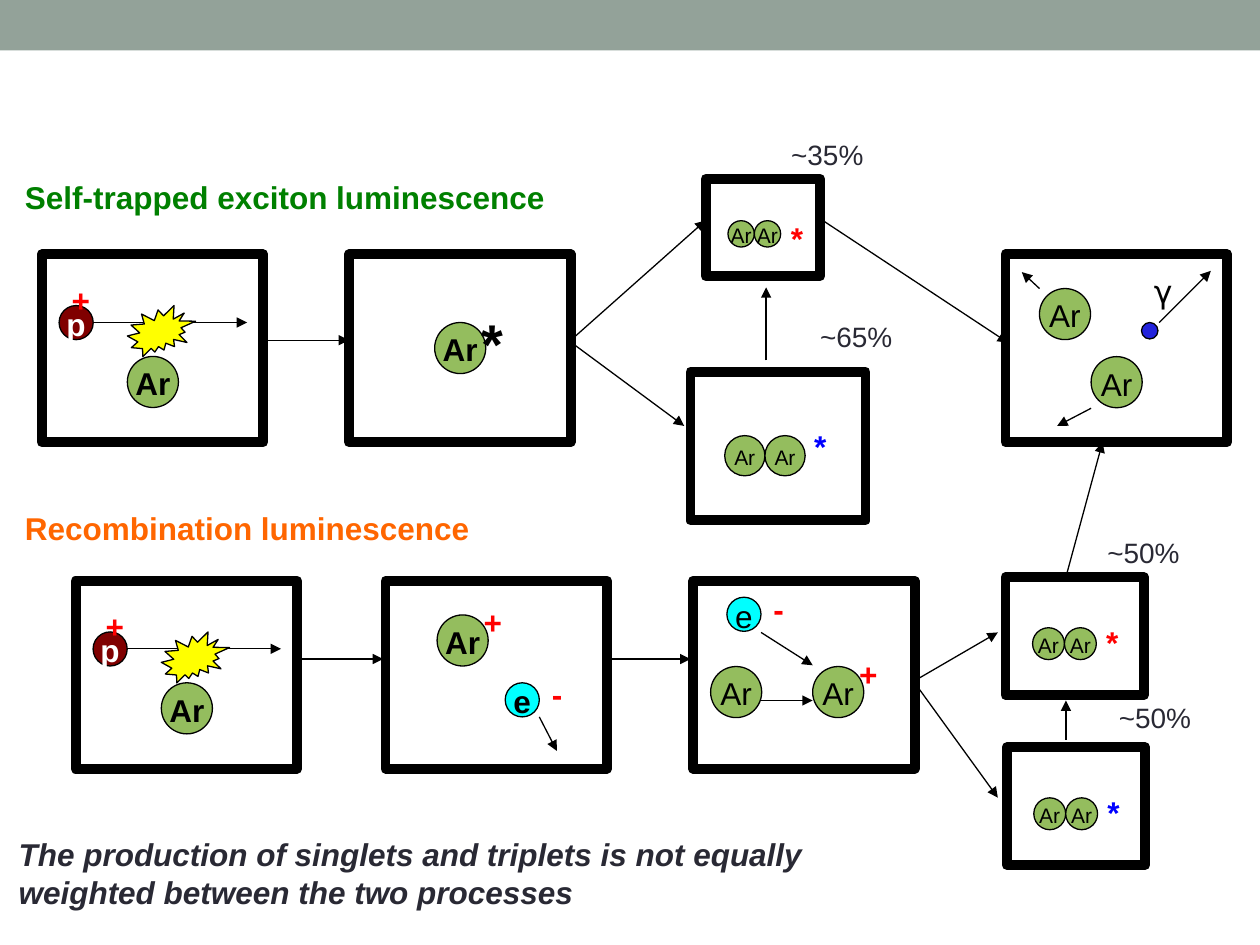
from pptx import Presentation
from pptx.dml.color import RGBColor
from pptx.enum.shapes import MSO_CONNECTOR, MSO_SHAPE
from pptx.enum.text import MSO_ANCHOR, PP_ALIGN
from pptx.oxml.ns import qn
from pptx.util import Pt
from lxml.etree import SubElement

BLACK, RED, BLUE, GREEN = "000000", "FF0000", "0000FF", "94BD5E"
CYAN, DARK = "00FFFF", "292934"
PANEL_WIDTH, PANEL_HEIGHT = 126.7, 107.3
ATOM, PARTICLE, PHOTON = 29.2, 19.5, 9.4

COLLISION_PANELS = [(23.8, 145.4), (43.2, 331.9)]
PLAIN_PANELS = [(199.4, 145.4), (574.6, 145.4), (220.3, 331.9), (396, 331.9)]

# left, top, frame width, star colour
EXCIMERS = [
    (403.2, 102.2, 65.5, RED),
    (394.6, 212.4, 100, BLUE),
    (574.6, 329.8, 79.2, RED),
    (575.3, 427, 79.2, BLUE),
]

# text, left, top, diameter, fill, bold
PARTICLES = [
    ("Ar", 248.4, 184.3, ATOM, GREEN, True),
    ("Ar", 623.5, 203.8, ATOM, GREEN, False),
    ("Ar", 594, 164.9, ATOM, GREEN, False),
    ("", 652.3, 184.3, PHOTON, "2323DC", False),
    ("Ar", 249.8, 351.4, ATOM, GREEN, True),
    ("e", 288.7, 390.2, PARTICLE, CYAN, True),
    ("e", 415.4, 341.3, PARTICLE, CYAN, False),
    ("Ar", 406.1, 380.9, ATOM, GREEN, False),
    ("Ar", 464.4, 380.9, ATOM, GREEN, False),
]

# text, left, top
CHARGES = [("+", 269.3, 339.8), ("-", 308.2, 380.9),
           ("-", 434.9, 331.9), ("+", 483.8, 369.4)]

# start x, start y, end x, end y
ARROWS = [
    (150.5, 194.4, 199.4, 194.4),
    (326.2, 194.4, 403.2, 126),
    (324.7, 194.4, 391, 243.4),
    (437.8, 205.9, 437.8, 164.2),
    (470.2, 126, 576, 195.8),
    (594, 164.9, 583.9, 155.5),
    (623.5, 233.3, 604.1, 243.4),
    (662.4, 184.3, 691.9, 154.8),
    (169.9, 376.6, 218.9, 376.6),
    (344.9, 376.6, 394.6, 376.6),
    (308.2, 409.7, 318.2, 429.1),
    (434.9, 400.3, 464.4, 400.3),
    (434.9, 361.4, 464.4, 380.2),
    (520.6, 390.2, 570.2, 361.4),
    (522.7, 390.2, 570.2, 455.8),
    (609.1, 422.6, 609.1, 400.3),
    (609.1, 329.8, 630, 252.7),
]

# text, left, top
PERCENTAGES = [("~35%", 445, 74.9), ("~65%", 461.5, 179.3),
               ("~50%", 625.7, 302.4), ("~50%", 632.2, 396.7)]

# text, left, top, width, height, colour, italic
STATEMENTS = [
    ("Self-trapped exciton luminescence", 7.2, 97.9, 463, 29, "008000", False),
    ("Recombination luminescence", 7.2, 287.3, 463, 29, "FF6600", False),
    ("The production of singlets and triplets is not equally weighted "
     "between the two processes", 3.6, 473.8, 489.6, 51, DARK, True),
]


def rgb(value):
    return RGBColor.from_string(value)


def write(shape, text, size, color, bold=False, italic=False, font="Arial", inset=5):
    frame = shape.text_frame
    frame.margin_top = Pt(inset)
    paragraph = frame.paragraphs[0]
    paragraph.text = text
    paragraph.font.name = font
    paragraph.font.size = Pt(size)
    paragraph.font.bold = bold
    paragraph.font.italic = italic
    paragraph.font.color.rgb = rgb(color)


def add_filled(kind, left, top, width, height, fill, line_width=0.75):
    shape = slide.shapes.add_shape(kind, Pt(left), Pt(top), Pt(width), Pt(height))
    shape.shadow.inherit = False
    shape.fill.solid()
    shape.fill.fore_color.rgb = rgb(fill)
    if line_width:
        shape.line.color.rgb = rgb(BLACK)
        shape.line.width = Pt(line_width)
    else:
        shape.line.fill.background()
    return shape


def add_frame(left, top, width=PANEL_WIDTH, height=PANEL_HEIGHT):
    add_filled(MSO_SHAPE.RECTANGLE, left, top, width, height, "FFFFFF", 5.67)


def add_particle(text, left, top, diameter, fill, bold=False, size=18, color=BLACK):
    shape = add_filled(MSO_SHAPE.OVAL, left, top, diameter, diameter, fill)
    if text:
        write(shape, text, size, color, bold)
        shape.text_frame.word_wrap = False
        shape.text_frame.vertical_anchor = MSO_ANCHOR.MIDDLE
        shape.text_frame.paragraphs[0].alignment = PP_ALIGN.CENTER


def add_text(text, left, top, width, height, size, color, **style):
    box = slide.shapes.add_textbox(Pt(left), Pt(top), Pt(width), Pt(height))
    box.text_frame.word_wrap = True
    write(box, text, size, color, **style)


def add_charge(text, left, top):
    add_text(text, left, top, 49, 25.9, 18, RED, bold=True)


def add_arrow(start_x, start_y, end_x, end_y):
    arrow = slide.shapes.add_connector(
        MSO_CONNECTOR.STRAIGHT, Pt(start_x), Pt(start_y), Pt(end_x), Pt(end_y))
    arrow.line.color.rgb = rgb(BLACK)
    arrow.line.width = Pt(0.75)
    properties = arrow._element.spPr
    SubElement(properties.find(qn("a:ln")), qn("a:tailEnd"), type="triangle")
    SubElement(properties, qn("a:effectLst"))


def add_collision(left, top):
    """A proton passing an argon atom, inside a panel."""
    add_frame(left, top)
    add_particle("Ar", left + 49, top + 58.3, ATOM, GREEN, True)
    add_arrow(left + 19.4, top + 38.9, left + 117.4, top + 38.9)
    add_particle("p", left + 10, top + 29.2, PARTICLE, "800000", True, color="FFFFFF")
    add_filled(MSO_SHAPE.EXPLOSION2, left + 49, top + 29.2, 39, 29.2, "FFFF00")
    add_charge("+", left + 10, top + 10)


def add_excimer(left, top, width, star_color):
    """Two touching argon atoms with a star, scaled to the frame width."""
    add_frame(left, top, width, 0.85 * width)
    diameter = 0.23 * width
    for index in range(2):
        add_particle("Ar", left + 0.195 * width + index * diameter,
                     top + 0.365 * width, diameter, GREEN, size=12)
    add_text("*", left + 0.636 * width, top + 0.258 * width, 0.38 * width,
             0.3 * width, 18, star_color, bold=True, inset=5.8)


presentation = Presentation()
presentation.slide_width, presentation.slide_height = Pt(720), Pt(540)
slide = presentation.slides.add_slide(presentation.slide_layouts[6])

add_filled(MSO_SHAPE.RECTANGLE, 0, 0, 720, 28.8, "93A299", 0)
for panel in PLAIN_PANELS:
    add_frame(*panel)
for panel in COLLISION_PANELS:
    add_collision(*panel)
for excimer in EXCIMERS:
    add_excimer(*excimer)
for particle in PARTICLES:
    add_particle(*particle)
for charge in CHARGES:
    add_charge(*charge)
add_text("*", 267.8, 170.6, 49, 38.2, 32, BLACK, bold=True, inset=5.8)
add_text("γ", 652.3, 155.5, 49, 3.6, 18, BLACK, font="DejaVu Sans", inset=3.6)
for arrow_ends in ARROWS:
    add_arrow(*arrow_ends)
for text, left, top in PERCENTAGES:
    add_text(text, left, top, 87.8, 26.6, 16, DARK, inset=3.6)
for text, left, top, width, height, color, italic in STATEMENTS:
    add_text(text, left, top, width, height, 18, color,
             bold=True, italic=italic, inset=3.6)

presentation.save("out.pptx")
